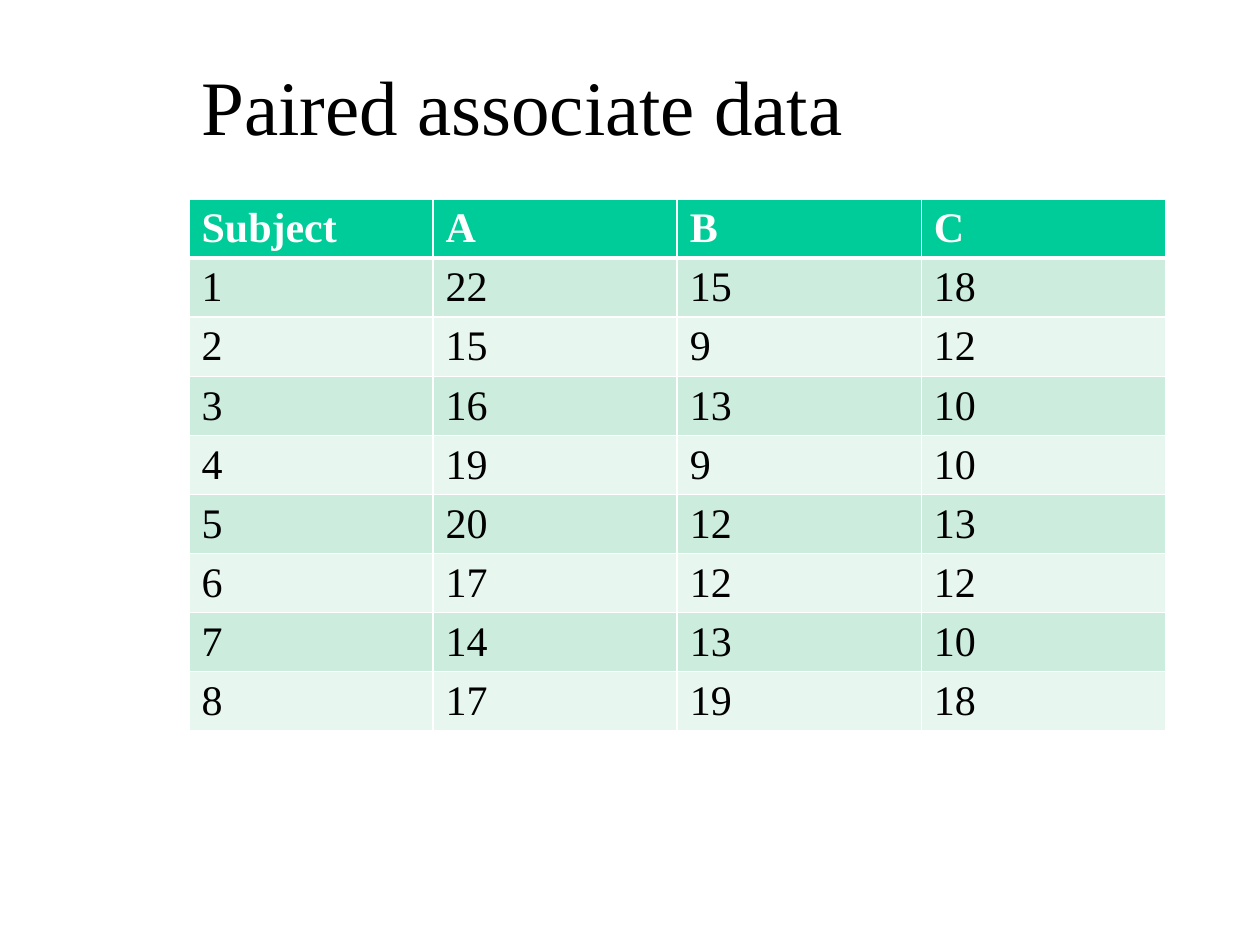
import dataclasses
import lxml.etree
import pptx
import pptx.dml.color
import pptx.enum.text
import pptx.oxml.ns
import pptx.util

WIDTH, HEIGHT = 10, 7.5
LEFT, SPAN = 0.15 * WIDTH, 0.775 * WIDTH
ROW = 0.41
FONT = "Times New Roman"
WHITE, BLACK = "FFFFFF", "000000"


@dataclasses.dataclass
class Style:
    fill: str
    ink: str
    bold: bool
    top: int
    base: int


HEAD = Style("00CC99", WHITE, True, 1, 3)
FIRST = Style("CCECDE", BLACK, False, 3, 1)
ODD = Style("CCECDE", BLACK, False, 1, 1)
EVEN = Style("E7F6EF", BLACK, False, 1, 1)

SCORES = [
    ("Subject", "A", "B", "C"),
    (1, 22, 15, 18),
    (2, 15, 9, 12),
    (3, 16, 13, 10),
    (4, 19, 9, 10),
    (5, 20, 12, 13),
    (6, 17, 12, 12),
    (7, 14, 13, 10),
    (8, 17, 19, 18),
]


def color(code: str) -> pptx.dml.color.RGBColor:
    return pptx.dml.color.RGBColor.from_string(code)


def write(frame, text: str, size: int, ink: str = BLACK, bold: bool = False) -> None:
    line = frame.paragraphs[0]
    line.alignment = pptx.enum.text.PP_ALIGN.LEFT
    run = line.add_run()
    run.text = text
    run.font.name = FONT
    run.font.size = pptx.util.Pt(size)
    run.font.bold = bold
    run.font.color.rgb = color(ink)


def edge(cell, side: str, width: int) -> None:
    tag = pptx.oxml.ns.qn
    props = cell._tc.get_or_add_tcPr()
    line = lxml.etree.SubElement(props, tag(f"a:ln{side}"), w=str(pptx.util.Pt(width)))
    fill = lxml.etree.SubElement(line, tag("a:solidFill"))
    lxml.etree.SubElement(fill, tag("a:srgbClr"), val=WHITE)


def paint(cell, text: str, style: Style) -> None:
    for side, width in zip("LRTB", (1, 1, style.top, style.base)):
        edge(cell, side, width)
    cell.fill.solid()
    cell.fill.fore_color.rgb = color(style.fill)
    write(cell.text_frame, text, 24, style.ink, style.bold)


def pick(row: int) -> Style:
    if row < 2:
        return (HEAD, FIRST)[row]
    return ODD if row % 2 else EVEN


def add_title(slide, text: str) -> None:
    title = slide.shapes.title
    title.left, title.top, title.width, title.height = map(
        pptx.util.Inches, (LEFT, 0.33, SPAN, 1)
    )
    title.text_frame.vertical_anchor = pptx.enum.text.MSO_ANCHOR.MIDDLE
    write(title.text_frame, text, 44)


def add_scores(slide) -> None:
    place = map(pptx.util.Inches, (LEFT, 1.58, SPAN, ROW * len(SCORES)))
    table = slide.shapes.add_table(len(SCORES), len(SCORES[0]), *place).table
    for row, values in enumerate(SCORES):
        for col, value in enumerate(values):
            paint(table.cell(row, col), str(value), pick(row))


def main() -> None:
    deck = pptx.Presentation()
    deck.slide_width = pptx.util.Inches(WIDTH)
    deck.slide_height = pptx.util.Inches(HEIGHT)
    slide = deck.slides.add_slide(deck.slide_layouts[5])
    add_title(slide, "Paired associate data")
    add_scores(slide)
    deck.save("out.pptx")


if __name__ == "__main__":
    main()
